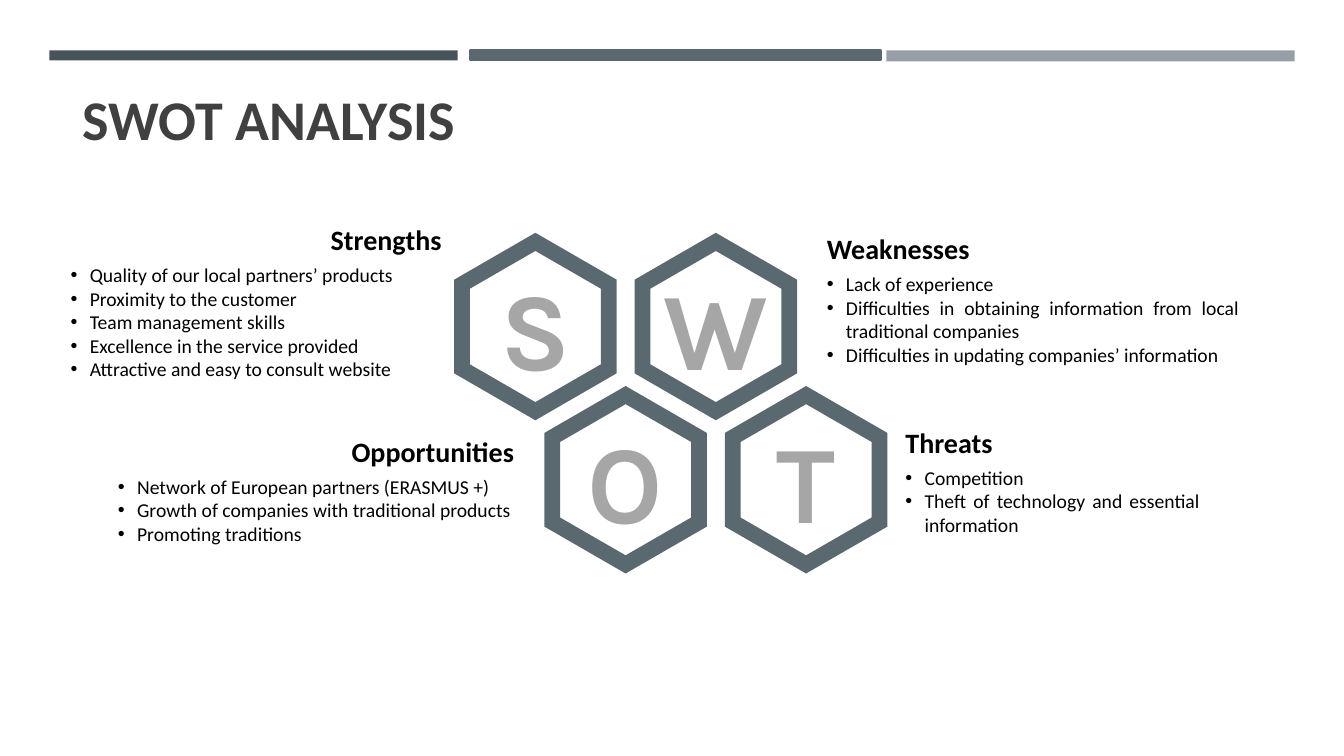
from dataclasses import dataclass
from math import cos, pi, sin

from lxml import etree
from pptx import Presentation
from pptx import util as u
from pptx.dml.color import RGBColor
from pptx.enum import shapes, text
from pptx.oxml import ns

TITLE = "SWOT ANALYSIS"

# letter, hexagon column and row (columns in whole steps, odd rows shifted by half)
CELLS = [("S", 0, 0), ("W", 1, 0), ("O", 0.5, 1), ("T", 1.5, 1)]

# heading, side of the hexagons, left, top, width, text lines, points
NOTES = [
    ("Strengths", "left", 0.7, 2.15, 3.68, 5, [
        "Quality of our local partners’ products",
        "Proximity to the customer",
        "Team management skills",
        "Excellence in the service provided",
        "Attractive and easy to consult website"]),
    ("Weaknesses", "right", 8.2, 2.24, 4.09, 4, [
        "Lack of experience",
        "Difficulties in obtaining information from local traditional companies",
        "Difficulties in updating companies’ information"]),
    ("Opportunities", "left", 1.17, 4.25, 3.93, 3, [
        "Network of European partners (ERASMUS +)",
        "Growth of companies with traditional products",
        "Promoting traditions"]),
    ("Threats", "right", 8.98, 4.16, 2.92, 3, [
        "Competition",
        "Theft of technology and essential information"]),
]


@dataclass(frozen=True)
class Theme:
    dark: str = "465359"
    slate: str = "5A6970"
    pale: str = "969FA7"
    title: str = "404040"
    letter: str = "A6A6A6"
    ink: str = "000000"
    font: str = "Calibri"
    mark: str = "Karla"
    big: float = 40
    huge: float = 78.8
    head: float = 20
    body: float = 14


T = Theme()

# left, width, height, colour, outline width
BARS = [(0.49, 4.05, 0.1, T.dark, 0),
        (4.66, 4.08, 0.09, T.slate, 1.75),
        (8.79, 4.05, 0.11, T.pale, 0)]
BAR_TOP = 0.5

HEX_X, HEX_Y = 5.31, 3.24      # centre of the first hexagon
STEP_X, STEP_Y = 1.79, 1.52
OUTER, INNER = 0.93, 0.75      # centre to corner

HEAD_H, BODY_DY = 0.44, 0.41
LINE_H, PAD, INDENT = 0.24, 0.05, 0.19


def paint(shape, color, line=0):
    shape.shadow.inherit = False
    shape.fill.solid()
    shape.fill.fore_color.rgb = RGBColor.from_string(color)
    if line:
        shape.line.color.rgb = RGBColor.from_string(color)
        shape.line.width = u.Pt(line)
    else:
        shape.line.fill.background()


def style(para, size, color, bold=False, name=T.font):
    font = para.font
    font.name, font.size, font.bold = name, u.Pt(size), bold
    font.color.rgb = RGBColor.from_string(color)


def setup(frame, anchor, side, edge):
    frame.word_wrap = True
    frame.vertical_anchor = anchor
    frame.margin_left = frame.margin_right = u.Inches(side)
    frame.margin_top = frame.margin_bottom = u.Inches(edge)


def add_box(slide, left, top, width, height, anchor, side=0):
    box = slide.shapes.add_textbox(*map(u.Inches, (left, top, width, height)))
    setup(box.text_frame, anchor, side, PAD)
    return box.text_frame


def bullet(para):
    props = para._p.get_or_add_pPr()
    props.set("marL", str(u.Inches(INDENT)))
    props.set("indent", str(-u.Inches(INDENT)))
    etree.SubElement(props, ns.qn("a:buFont")).set("typeface", "Arial")
    etree.SubElement(props, ns.qn("a:buChar")).set("char", "•")


def corners(x, y, radius):
    """Six points of an upright hexagon, from the top, in whole EMU."""
    return [(u.Inches(x + radius * sin(k * pi / 3)),
             u.Inches(y - radius * cos(k * pi / 3))) for k in range(6)]


def add_hex(slide, letter, col, row):
    x, y = HEX_X + col * STEP_X, HEX_Y + row * STEP_Y
    rim, hole = corners(x, y, OUTER), corners(x, y, INNER)[::-1]
    pen = slide.shapes.build_freeform(*rim[0], scale=1.0)
    pen.add_line_segments(rim[1:])
    pen.move_to(*hole[0])
    pen.add_line_segments(hole[1:])
    ring = pen.convert_to_shape()
    paint(ring, T.slate)
    setup(ring.text_frame, text.MSO_ANCHOR.MIDDLE, 0.07, 0.04)
    para = ring.text_frame.paragraphs[0]
    para.text, para.alignment = letter, text.PP_ALIGN.CENTER
    style(para, T.huge, T.letter, True, T.mark)


def add_note(slide, name, side, left, top, width, lines, points):
    frame = add_box(slide, left, top, width, HEAD_H, text.MSO_ANCHOR.BOTTOM)
    para = frame.paragraphs[0]
    para.text = name
    para.alignment = (text.PP_ALIGN.RIGHT if side == "left"
                      else text.PP_ALIGN.LEFT)
    style(para, T.head, T.ink, True)

    frame = add_box(slide, left, top + BODY_DY, width,
                    2 * PAD + lines * LINE_H, text.MSO_ANCHOR.TOP)
    for i, point in enumerate(points):
        para = frame.add_paragraph() if i else frame.paragraphs[0]
        para.text, para.alignment = point, text.PP_ALIGN.JUSTIFY
        bullet(para)
        style(para, T.body, T.ink)


def main():
    deck = Presentation()
    deck.slide_width, deck.slide_height = u.Inches(13.33), u.Inches(7.5)
    slide = deck.slides.add_slide(deck.slide_layouts[6])

    for left, width, height, color, line in BARS:
        bar = slide.shapes.add_shape(
            shapes.MSO_SHAPE.RECTANGLE,
            *map(u.Inches, (left, BAR_TOP, width, height)))
        paint(bar, color, line)

    frame = add_box(slide, 0.62, 0.73, 12.06, 0.82,
                    text.MSO_ANCHOR.BOTTOM, 0.2)
    frame.paragraphs[0].text = TITLE
    style(frame.paragraphs[0], T.big, T.title, True)

    for cell in CELLS:
        add_hex(slide, *cell)
    for note in NOTES:
        add_note(slide, *note)
    deck.save("out.pptx")


if __name__ == "__main__":
    main()
